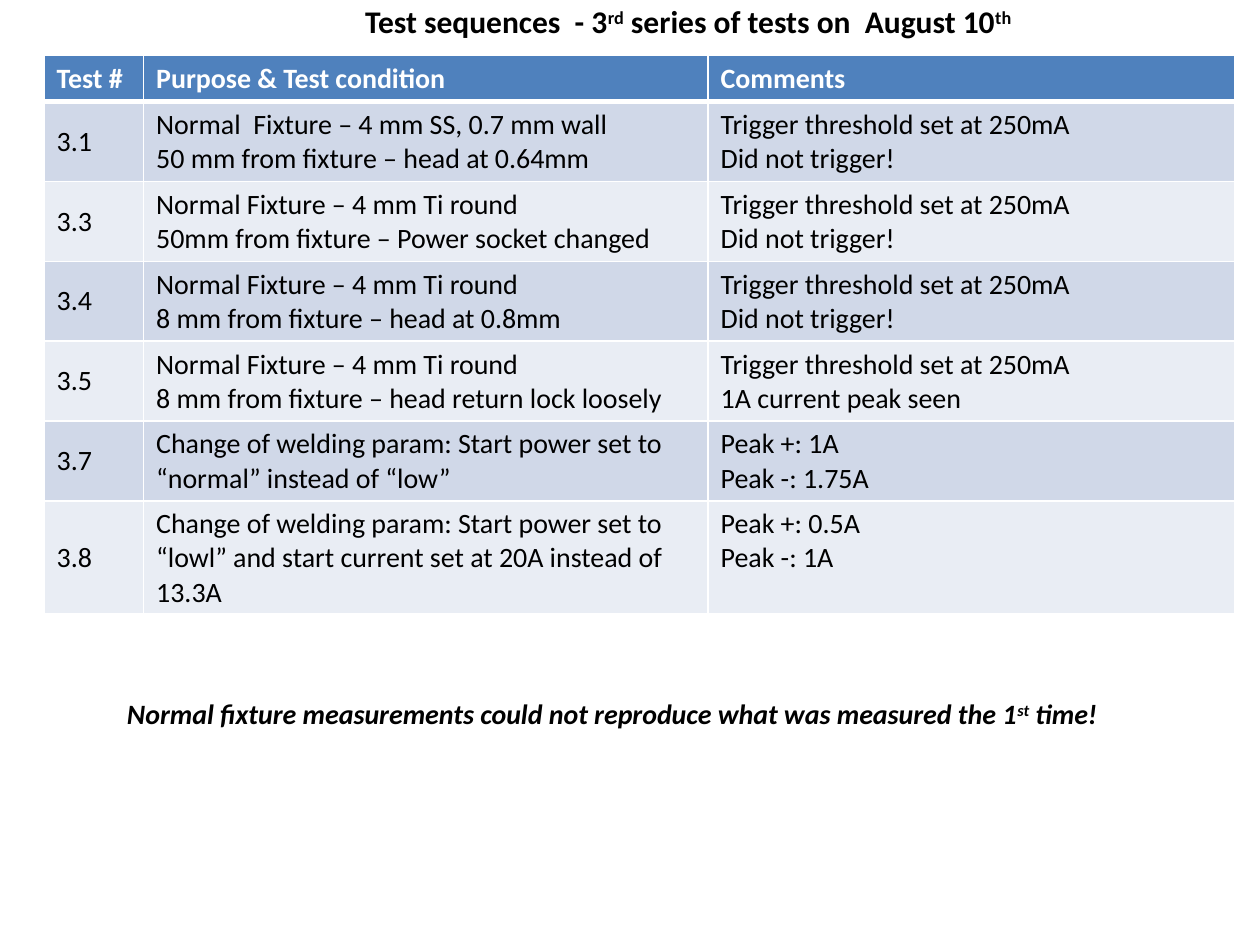
from dataclasses import dataclass

from lxml import etree
from pptx import Presentation
from pptx.dml.color import RGBColor
from pptx.enum.text import MSO_ANCHOR
from pptx.oxml.ns import qn
from pptx.util import Inches, Pt

MIDDLE = MSO_ANCHOR.MIDDLE
TOP = MSO_ANCHOR.TOP


@dataclass(frozen=True)
class Theme:
    font: str = "Calibri"
    title_size: int = 18
    body_size: int = 16
    text: str = "000000"
    white: str = "FFFFFF"
    header: str = "4F81BD"
    bands: tuple = ("D0D8E8", "E9EDF4")
    line: float = 1
    header_line: float = 3
    superscript: int = 30000


THEME = Theme()

TITLE = [("Test sequences  - 3", False), ("rd", True),
         (" series of tests on  August 10", False), ("th", True)]
CONCLUSION = [("Normal fixture measurements could not reproduce what was measured the 1", False),
              ("st", True), (" time!", False)]

HEADINGS = ("Test #", "Purpose & Test condition", "Comments")
THRESHOLD = "Trigger threshold set at 250mA"
NO_TRIGGER = f"{THRESHOLD}\nDid not trigger!"
TI_ROUND = "Normal Fixture – 4 mm Ti round"
TESTS = [
    ("3.1", "Normal  Fixture – 4 mm SS, 0.7 mm wall\n50 mm from fixture – head at 0.64mm", NO_TRIGGER),
    ("3.3", f"{TI_ROUND}\n50mm from fixture – Power socket changed", NO_TRIGGER),
    ("3.4", f"{TI_ROUND}\n8 mm from fixture – head at 0.8mm", NO_TRIGGER),
    ("3.5", f"{TI_ROUND}\n8 mm from fixture – head return lock loosely",
     f"{THRESHOLD}\n1A current peak seen"),
    ("3.7", "Change of welding param: Start power set to “normal” instead of “low”",
     "Peak +: 1A\nPeak -: 1.75A"),
    ("3.8", "Change of welding param: Start power set to “lowl” and start current "
            "set at 20A instead of 13.3A", "Peak +: 0.5A\nPeak -: 1A"),
]
COLUMN_WIDTHS = (0.79, 4.48, 4.18)
ROW_HEIGHTS = (0.35, *[0.63] * 5, 0.89)


def add_run(paragraph, text, size, color, bold=False, italic=False, raised=False):
    run = paragraph.add_run()
    run.text = text
    run.font.name = THEME.font
    run.font.size = Pt(size)
    run.font.bold = bold
    run.font.italic = italic
    run.font.color.rgb = RGBColor.from_string(color)
    if raised:
        run.font._element.set("baseline", str(THEME.superscript))


def add_line_of_text(slide, box, runs, size, italic=False):
    """Bold single line whose ordinals are superscript."""
    shape = slide.shapes.add_textbox(*map(Inches, box))
    shape.text_frame.word_wrap = False
    paragraph = shape.text_frame.paragraphs[0]
    for text, raised in runs:
        add_run(paragraph, text, size, THEME.text, True, italic, raised)


def set_borders(cell, bottom, top):
    properties = cell._tc.get_or_add_tcPr()
    widths = {"lnL": THEME.line, "lnR": THEME.line, "lnT": top, "lnB": bottom}
    for index, (side, width) in enumerate(widths.items()):
        line = etree.Element(qn(f"a:{side}"), w=str(Pt(width)))
        fill = etree.SubElement(line, qn("a:solidFill"))
        etree.SubElement(fill, qn("a:srgbClr"), val=THEME.white)
        properties.insert(index, line)


def fill_cell(cell, text, row, column):
    is_header = row == 0
    cell.fill.solid()
    background = THEME.header if is_header else THEME.bands[(row - 1) % 2]
    cell.fill.fore_color.rgb = RGBColor.from_string(background)
    cell.vertical_anchor = MIDDLE if column == 0 and not is_header else TOP
    set_borders(cell,
                bottom=THEME.header_line if is_header else THEME.line,
                top=THEME.header_line if row == 1 else THEME.line)
    frame = cell.text_frame
    for index, line in enumerate(text.split("\n")):
        paragraph = frame.add_paragraph() if index else frame.paragraphs[0]
        add_run(paragraph, line, THEME.body_size,
                THEME.white if is_header else THEME.text, bold=is_header)


def add_test_table(slide, box):
    rows = [HEADINGS, *TESTS]
    table = slide.shapes.add_table(len(rows), len(HEADINGS), *map(Inches, box)).table
    for column, width in zip(table.columns, COLUMN_WIDTHS):
        column.width = Inches(width)
    for row, height in zip(table.rows, ROW_HEIGHTS):
        row.height = Inches(height)
    for row, texts in enumerate(rows):
        for column, text in enumerate(texts):
            fill_cell(table.cell(row, column), text, row, column)


def main():
    presentation = Presentation()
    presentation.slide_width = Inches(10)
    presentation.slide_height = Inches(7.5)
    slide = presentation.slides.add_slide(presentation.slide_layouts[6])

    # Title, test table and conclusion
    add_line_of_text(slide, (2.8, -0.03, 5.49, 0.4), TITLE, THEME.title_size)
    add_test_table(slide, (0.35, 0.44, sum(COLUMN_WIDTHS), sum(ROW_HEIGHTS)))
    add_line_of_text(slide, (0.91, 5.48, 8.03, 0.37), CONCLUSION, THEME.body_size, italic=True)

    presentation.save("out.pptx")


if __name__ == "__main__":
    main()
